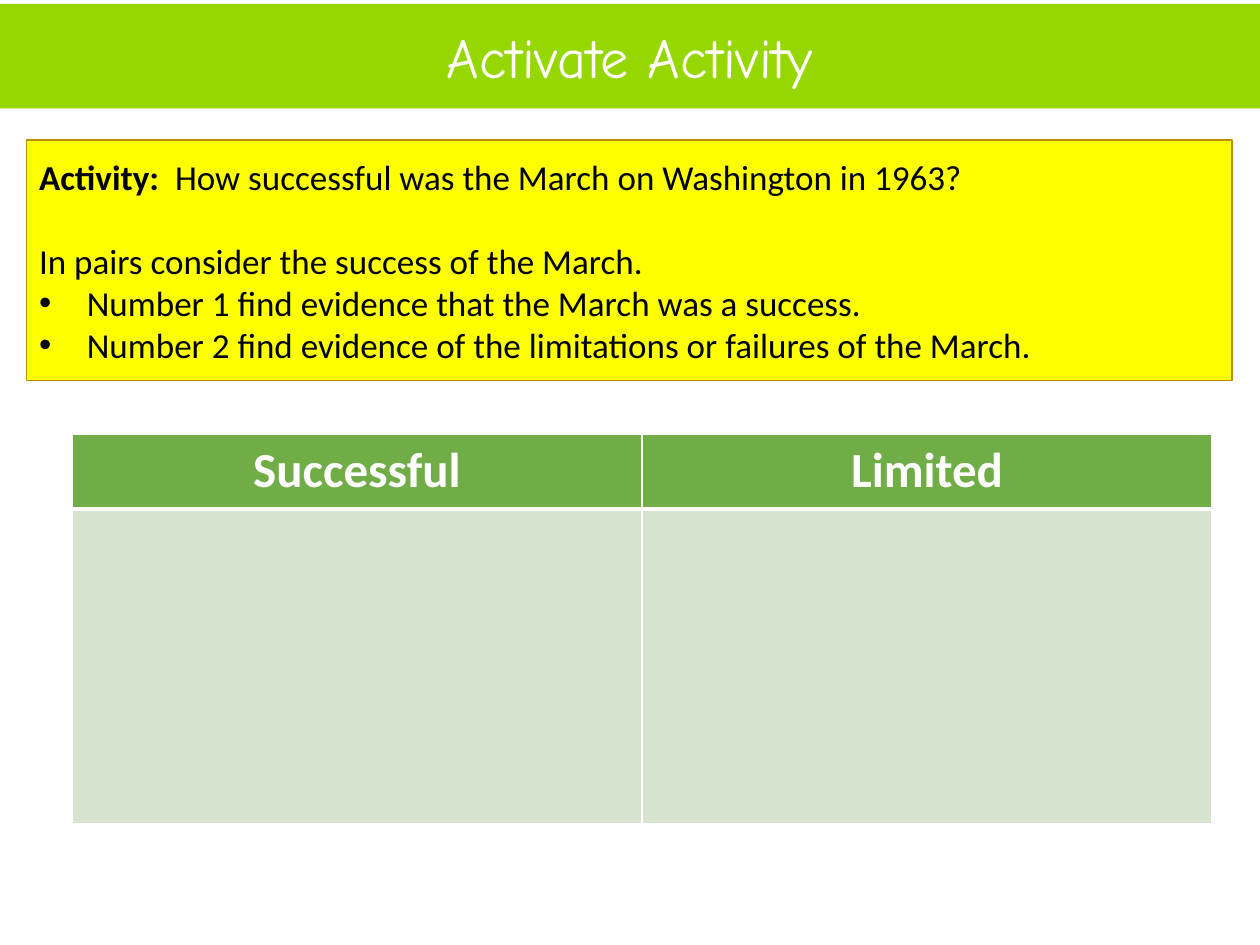
"""Build the Activate Activity slide with its task box and comparison table."""
from dataclasses import dataclass

import pptx
import pptx.dml.color
import pptx.enum.text
import pptx.oxml
import pptx.oxml.ns
import pptx.util

Inches = pptx.util.Inches
Pt = pptx.util.Pt
Align = pptx.enum.text.PP_ALIGN


@dataclass(frozen=True)
class Theme:
    title_font: str = "Comic Neue"
    body_font: str = "Calibri"
    banner: str = "97D700"
    task_fill: str = "FFFF00"
    task_line: str = "BD8E00"
    header_fill: str = "70AD47"
    cell_fill: str = "D5E3CF"
    white: str = "FFFFFF"
    black: str = "000000"
    title_size: int = 32
    header_size: int = 28
    body_size: int = 20


@dataclass(frozen=True)
class Area:
    left: float
    top: float
    width: float
    height: float


@dataclass(frozen=True)
class TaskLine:
    text: str
    label: str = ""
    bullet: bool = False
    gap: int = 0


THEME = Theme()
BANNER = Area(0, 0.03, 10, 0.83)
TASK_BOX = Area(0.21, 1.11, 9.57, 1.91)
TABLE = Area(0.57, 3.45, 9.05, 3.09)
HEADER_HEIGHT = 0.59
HEADINGS = ["Successful", "Limited"]
TASK_LINES = [
    TaskLine("How successful was the March on Washington in 1963?", label="Activity:  "),
    TaskLine("In pairs consider the success of the March.", gap=24),
    TaskLine("Number 1 find evidence that the March was a success.", bullet=True),
    TaskLine("Number 2 find evidence of the limitations or failures of the March.", bullet=True),
]


def rgb(value: str):
    """Return a colour object for a hex value."""
    return pptx.dml.color.RGBColor.from_string(value)


def paint(target, color: str) -> None:
    """Give a shape or a cell a solid fill."""
    target.fill.solid()
    target.fill.fore_color.rgb = rgb(color)


def add_text(para, text: str, *, size: int, color: str, font: str = THEME.body_font,
             bold: bool = False, align=Align.LEFT) -> None:
    """Add a formatted run to a paragraph."""
    para.alignment = align
    span = para.add_run()
    span.text = text
    span.font.name = font
    span.font.size = Pt(size)
    span.font.bold = bold
    span.font.color.rgb = rgb(color)


def place(box, area: Area, fill: str):
    """Move and fill a placeholder and return its centred text frame."""
    box.left, box.top = Inches(area.left), Inches(area.top)
    box.width, box.height = Inches(area.width), Inches(area.height)
    paint(box, fill)
    frame = box.text_frame
    frame.word_wrap = True
    frame.auto_size = pptx.enum.text.MSO_AUTO_SIZE.NONE
    frame.vertical_anchor = pptx.enum.text.MSO_ANCHOR.MIDDLE
    return frame


def set_bullet(para, bullet: bool) -> None:
    """Turn a paragraph's bullet and hanging indent on or off."""
    properties = para._p.get_or_add_pPr()
    indent = Inches(0.38) if bullet else 0
    properties.set("marL", str(indent))
    properties.set("indent", str(-indent))
    names = [("a:buFont", "typeface", "Arial"), ("a:buChar", "char", "•")]
    if not bullet:
        names = [("a:buNone", "", "")]
    for tag, key, value in names:
        element = pptx.oxml.ns.qn(tag)
        child = properties.makeelement(element, {key: value} if key else {})
        properties.append(child)


def set_borders(cell, bottom_width: int) -> None:
    """Draw white borders round a cell."""
    properties = cell._tc.get_or_add_tcPr()
    namespace = pptx.oxml.ns.nsdecls("a")
    for index, side in enumerate("LRTB"):
        width = Pt(bottom_width if side == "B" else 1)
        properties.insert(index, pptx.oxml.parse_xml(
            f'<a:ln{side} {namespace} w="{width}"><a:solidFill>'
            f'<a:srgbClr val="{THEME.white}"/></a:solidFill></a:ln{side}>'))


def add_task(box) -> None:
    """Write the task into the body placeholder."""
    frame = place(box, TASK_BOX, THEME.task_fill)
    box.line.color.rgb = rgb(THEME.task_line)
    box.line.width = Pt(1)
    for index, line in enumerate(TASK_LINES):
        para = frame.add_paragraph() if index else frame.paragraphs[0]
        para.space_before = Pt(line.gap)
        set_bullet(para, line.bullet)
        if line.label:
            add_text(para, line.label, size=THEME.body_size, color=THEME.black, bold=True)
        add_text(para, line.text, size=THEME.body_size, color=THEME.black)


def add_comparison(page) -> None:
    """Add the two-column table with empty cells for answers."""
    table = page.shapes.add_table(
        2, len(HEADINGS), Inches(TABLE.left), Inches(TABLE.top),
        Inches(TABLE.width), Inches(TABLE.height)).table
    table.rows[0].height = Inches(HEADER_HEIGHT)
    table.rows[1].height = Inches(TABLE.height - HEADER_HEIGHT)
    for column, heading in enumerate(HEADINGS):
        header, answer = table.cell(0, column), table.cell(1, column)
        paint(header, THEME.header_fill)
        paint(answer, THEME.cell_fill)
        set_borders(header, 3)
        set_borders(answer, 1)
        add_text(header.text_frame.paragraphs[0], heading, size=THEME.header_size,
                 color=THEME.white, bold=True, align=Align.CENTER)


def main() -> None:
    """Build and save the deck."""
    deck = pptx.Presentation()
    deck.slide_width, deck.slide_height = Inches(10), Inches(7.5)
    page = deck.slides.add_slide(deck.slide_layouts[1])
    title = place(page.shapes.title, BANNER, THEME.banner)
    add_text(title.paragraphs[0], "Activate Activity", size=THEME.title_size,
             color=THEME.white, font=THEME.title_font, align=Align.CENTER)
    add_comparison(page)
    add_task(page.placeholders[1])
    deck.save("out.pptx")


if __name__ == "__main__":
    main()
